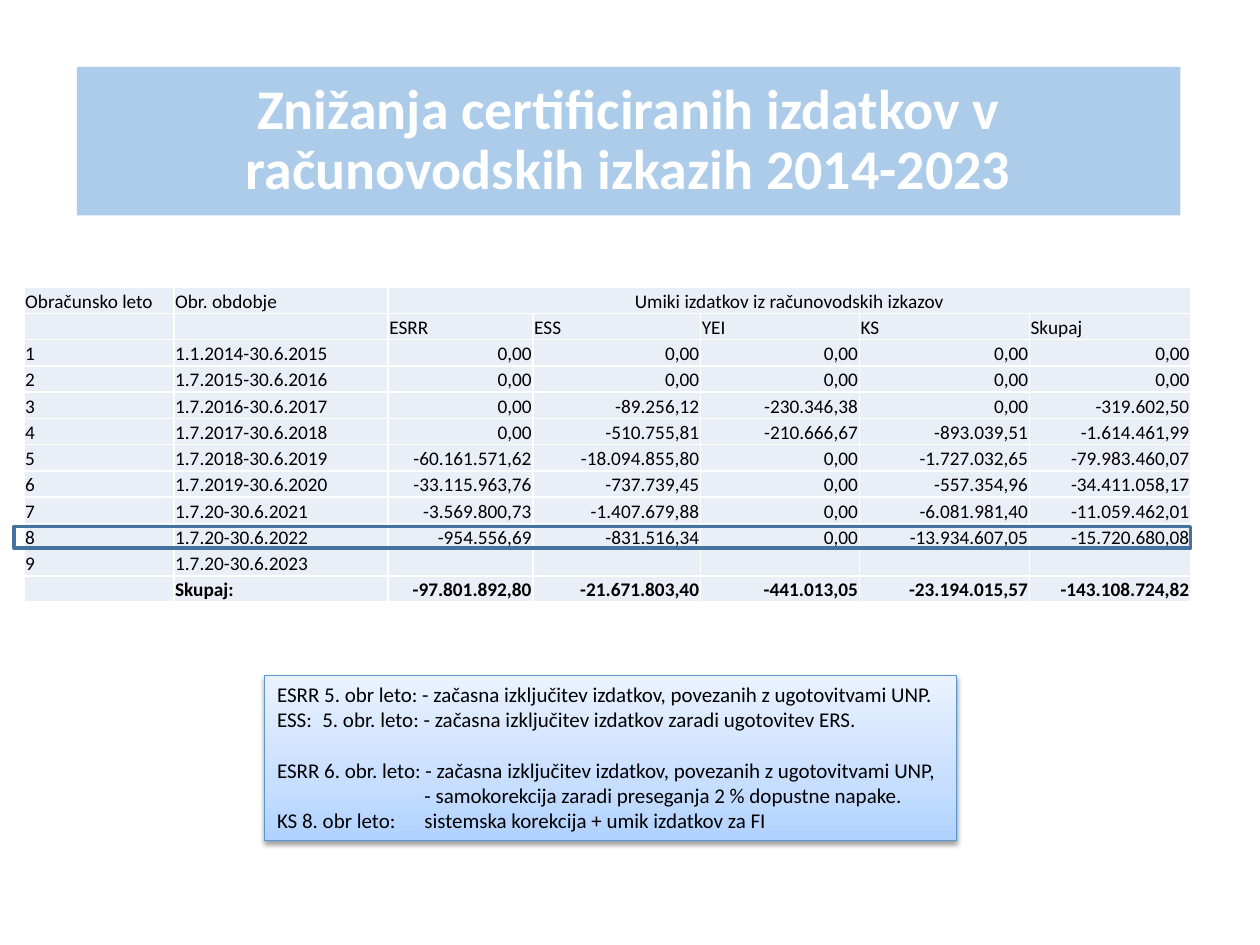
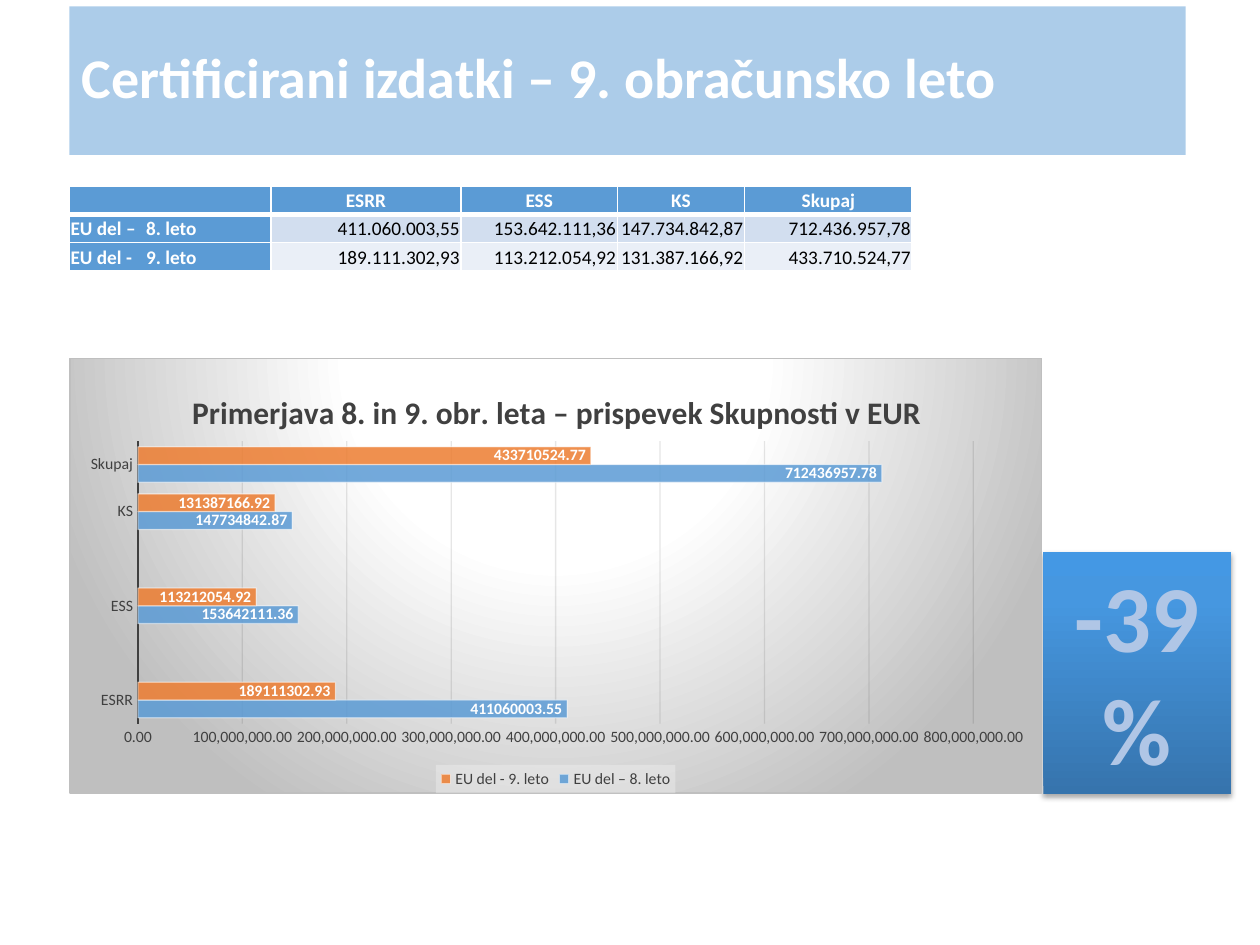
import pptx
import pptx.util
import pptx.chart.data
import pptx.dml.color
import pptx.enum.chart
import pptx.enum.shapes
import pptx.enum.text
import pptx.oxml
import pptx.oxml.ns

Inches, Pt = pptx.util.Inches, pptx.util.Pt
Align, Anchor = pptx.enum.text.PP_ALIGN, pptx.enum.text.MSO_ANCHOR
RECT = pptx.enum.shapes.MSO_SHAPE.RECTANGLE
qn, parse = pptx.oxml.ns.qn, pptx.oxml.parse_xml
NS = pptx.oxml.ns.nsdecls("a", "c")


class Theme:
    font = "Calibri"
    white, black, dark, grey = "FFFFFF", "000000", "404040", "BFBFBF"
    blue, orange, edge = "5B9BD5", "ED7D31", "43739E"
    pale, mid, big = "EAEFF7", "D2DEEF", "B0C6E6"
    note_line, grid, key = "5698D3", "0D0D0D", "F2F2F2"
    note_fade = ((0, "B0D2FF"), (35, "C7DEFF"), (100, "EAF2FF"))
    drop_fade = ((0, "3674AD"), (80, "4697E0"), (100, "4498E4"))
    area_fade = ((0, white), (39, white), (100, grey))
    title, note, cell, drop, head, label = 32, 12, 11, 54, 18, 9


UP = '<a:lin ang="16200000" scaled="0"/>'
ROUND = ('<a:path path="circle"><a:fillToRect l="50000" t="-80000" '
         'r="50000" b="180000"/></a:path>')


# Shared helpers
def rgb(code):
    return pptx.dml.color.RGBColor.from_string(code)


def style(font, size, color, bold=False):
    font.name, font.size, font.bold = Theme.font, Pt(size), bold
    font.color.rgb = rgb(color)


def write(para, text, size, color, bold=False, align=None):
    para.alignment = align
    run = para.add_run()
    run.text = text
    style(run.font, size, color, bold)


def tab_stop(para, inch):
    props = para._p.get_or_add_pPr()
    props.append(parse(f'<a:tabLst {NS}><a:tab pos="{Inches(inch)}" algn="l"/></a:tabLst>'))


def fade(part, percent):
    for color in part.iter(qn("a:srgbClr")):
        color.append(parse(f'<a:alpha {NS} val="{percent * 1000}"/>'))


def blend(stops, way):
    marks = "".join(f'<a:gs pos="{at * 1000}"><a:srgbClr val="{code}"/></a:gs>'
                    for at, code in stops)
    return f'<a:gradFill {NS} rotWithShape="1"><a:gsLst>{marks}</a:gsLst>{way}</a:gradFill>'


def add_rect(slide, box, fill=None, line=None, width=1):
    shape = slide.shapes.add_shape(RECT, *map(Inches, box))
    shape.shadow.inherit = False
    if fill:
        shape.fill.solid()
        shape.fill.fore_color.rgb = rgb(fill)
    else:
        shape.fill.background()
    if line:
        shape.line.color.rgb = rgb(line)
        shape.line.width = Pt(width)
    else:
        shape.line.fill.background()
    shape.text_frame.word_wrap = True
    return shape


def add_panel(slide, box, stops, dist, percent, line=None):
    """Rectangle with an upward gradient and a soft shadow."""
    shape = add_rect(slide, box, None, line, 0.75)
    props = shape._element.spPr
    props.replace(props.find(qn("a:noFill")), parse(blend(stops, UP)))
    props.find(qn("a:effectLst")).append(parse(
        f'<a:outerShdw {NS} blurRad="{Pt(3.1)}" dist="{Pt(dist)}" dir="5400000" '
        f'rotWithShape="0"><a:srgbClr val="{Theme.black}">'
        f'<a:alpha val="{percent * 1000}"/></a:srgbClr></a:outerShdw>'))
    shape.text_frame.vertical_anchor = Anchor.TOP
    return shape


def add_title(slide, box, text, align):
    band = add_rect(slide, box, Theme.blue)
    fade(band._element.spPr, 50)
    band.text_frame.vertical_anchor = Anchor.MIDDLE
    para = band.text_frame.paragraphs[0]
    para.line_spacing = 0.9
    write(para, text, Theme.title, Theme.white, True, align)


def add_grid(slide, left, top, cols, high, rows, look, anchor):
    """Table whose look(row, col) gives fill, text colour, bold and alignment."""
    table = slide.shapes.add_table(
        len(rows), len(cols), Inches(left), Inches(top),
        Inches(sum(cols)), Inches(high)).table
    table.first_row = table.horz_banding = False
    for col, wide in enumerate(cols):
        table.columns[col].width = Inches(wide)
    for r, row in enumerate(rows):
        table.rows[r].height = Inches(high / len(rows))
        for c, text in enumerate(row):
            cell = table.cell(r, c)
            fill, color, bold, align = look(r, c)
            cell.margin_left = cell.margin_right = cell.margin_top = Inches(0.01)
            cell.margin_bottom = 0
            cell.vertical_anchor = anchor
            for side in "LRTB":
                cell._tc.get_or_add_tcPr().append(parse(
                    f'<a:ln{side} {NS} w="{Pt(1)}"><a:solidFill><a:srgbClr '
                    f'val="{Theme.white}"/></a:solidFill></a:ln{side}>'))
            cell.fill.solid()
            cell.fill.fore_color.rgb = rgb(fill)
            para = cell.text_frame.paragraphs[0]
            if "\t" in text:
                tab_stop(para, 0.6)
            if text:
                write(para, text, Theme.cell, color, bold, align)
            else:
                para._p.append(parse(f'<a:endParaRPr {NS} sz="{Theme.cell * 100}"/>'))
    return table


# Slide 1: cuts by accounting year
YEARS = ["1.1.2014-30.6.2015", "1.7.2015-30.6.2016", "1.7.2016-30.6.2017",
         "1.7.2017-30.6.2018", "1.7.2018-30.6.2019", "1.7.2019-30.6.2020",
         "1.7.20-30.6.2021", "1.7.20-30.6.2022", "1.7.20-30.6.2023"]
CUTS = [
    ["Umiki izdatkov iz računovodskih izkazov", "", "", "", ""],
    ["ESRR", "ESS", "YEI", "KS", "Skupaj"],
    ["0,00"] * 5,
    ["0,00"] * 5,
    ["0,00", "-89.256,12", "-230.346,38", "0,00", "-319.602,50"],
    ["0,00", "-510.755,81", "-210.666,67", "-893.039,51", "-1.614.461,99"],
    ["-60.161.571,62", "-18.094.855,80", "0,00", "-1.727.032,65", "-79.983.460,07"],
    ["-33.115.963,76", "-737.739,45", "0,00", "-557.354,96", "-34.411.058,17"],
    ["-3.569.800,73", "-1.407.679,88", "0,00", "-6.081.981,40", "-11.059.462,01"],
    ["-954.556,69", "-831.516,34", "0,00", "-13.934.607,05", "-15.720.680,08"],
    [""] * 5,
    ["-97.801.892,80", "-21.671.803,40", "-441.013,05", "-23.194.015,57",
     "-143.108.724,82"],
]
# Each note: text, tab stop, space before
NOTES = [
    ("ESRR 5. obr leto: - začasna izključitev izdatkov, povezanih z ugotovitvami UNP.", None, 0),
    ("ESS:\t5. obr. leto: - začasna izključitev izdatkov zaradi ugotovitev ERS.", 0.36, 0),
    ("ESRR 6. obr. leto: - začasna izključitev izdatkov, povezanih z ugotovitvami UNP,", None, 14.6),
    ("\t- samokorekcija zaradi preseganja 2 % dopustne napake.", 1.17, 0),
    ("KS 8. obr leto:\tsistemska korekcija + umik izdatkov za FI", 1.17, 0),
]


def add_cuts(slide, left, top, high):
    last = len(CUTS) - 1

    def year_look(r, c):
        return Theme.pale, Theme.black, r == last, Align.LEFT

    def cut_look(r, c):
        align = {0: Align.CENTER, 1: Align.LEFT}.get(r, Align.RIGHT)
        return Theme.pale, Theme.black, r == last, align

    spans = [["Obračunsko leto", "Obr. obdobje"], ["", ""]]
    spans += [[str(n), span] for n, span in enumerate(YEARS, 1)]
    spans += [["", "Skupaj:"]]
    wide = [1.19, 1.7]
    sums = add_grid(slide, left + sum(wide), top, [1.15, 1.33, 1.26, 1.35, 1.28],
                    high, CUTS, cut_look, Anchor.BOTTOM)
    sums.cell(0, 0).merge(sums.cell(0, 4))
    add_grid(slide, left, top, wide, high, spans, year_look, Anchor.BOTTOM)
    # Frame round year 8
    add_rect(slide, (left - 0.08, top + 1.9, 9.34, 0.17), None, Theme.edge, 2)


def add_notes(slide, box):
    frame = add_panel(slide, box, Theme.note_fade, 1.6, 38, Theme.note_line).text_frame
    frame.margin_right = 0
    for n, (text, stop, gap) in enumerate(NOTES):
        para = frame.add_paragraph() if n else frame.paragraphs[0]
        if gap:
            para.space_before = Pt(gap)
        if stop:
            tab_stop(para, stop)
        write(para, text, Theme.note, Theme.black, align=Align.LEFT)


def cuts_slide(slide):
    add_title(slide, (0.61, 0.53, 8.76, 1.18),
              "Znižanja certificiranih izdatkov v računovodskih izkazih 2014-2023", Align.CENTER)
    add_notes(slide, (2.1, 5.36, 5.49, 1.31))
    add_cuts(slide, 0.19, 2.28, 2.5)


# Slide 2: year 9 against year 8
FUNDS = ["ESRR", "ESS", "KS", "Skupaj"]
SPENT = [("EU del –", "8. leto", [411060003.55, 153642111.36, 147734842.87, 712436957.78]),
         ("EU del -", "9. leto", [189111302.93, 113212054.92, 131387166.92, 433710524.77])]


def euro(value):
    return f"{value:,.2f}".translate(str.maketrans(",.", ".,"))


def add_sums(slide, left, top):
    def look(r, c):
        if r == 0 or c == 0:
            return Theme.blue, Theme.white, True, Align.LEFT if c == 0 else Align.CENTER
        return (Theme.mid if r == 1 else Theme.pale), Theme.black, False, Align.RIGHT

    rows = [[""] + FUNDS]
    rows += [[f"{part}\t{year}"] + [euro(v) for v in vals] for part, year, vals in SPENT]
    table = add_grid(slide, left, top, [1.6, 1.51, 1.24, 1.01, 1.33], 0.67,
                     rows, look, Anchor.MIDDLE)
    # Thick rule under the head row
    for c in range(len(table.columns)):
        for r, side in ((0, "a:lnB"), (1, "a:lnT")):
            table.cell(r, c)._tc.tcPr.find(qn(side)).set("w", str(Pt(3)))


def lay_out(part, mark, inner=False, **sizes):
    """Place a chart part by shares of the chart's size, after the child named mark."""
    for old in part.findall(qn("c:layout")):
        part.remove(old)
    keys = ['<c:layoutTarget val="inner"/>'] if inner else []
    keys += [f'<c:{k}Mode val="edge"/>' for k in "xy"]
    keys += [f'<c:{k} val="{v}"/>' for k, v in sizes.items()]
    layout = parse(f'<c:layout {NS}><c:manualLayout>{"".join(keys)}</c:manualLayout></c:layout>')
    if mark:
        part.find(qn(mark)).addnext(layout)
    else:
        part.insert(0, layout)


def add_bars(slide, box):
    enum = pptx.enum.chart
    data = pptx.chart.data.CategoryChartData()
    data.categories = ["ESRR", "", "ESS", "", "KS", "Skupaj"]
    for part, year, (esrr, ess, ks, total) in SPENT:
        data.add_series(f"{part} {year}", [esrr, None, ess, None, ks, total])
    chart = slide.shapes.add_chart(
        enum.XL_CHART_TYPE.BAR_CLUSTERED, *map(Inches, box), data).chart
    style(chart.font, 10, Theme.black)
    space = chart._chartSpace
    space.find(qn("c:chart")).addnext(parse(
        f'<c:spPr {NS}>{blend(Theme.area_fade, ROUND)}<a:ln w="{Pt(0.75)}"><a:solidFill>'
        f'<a:srgbClr val="{Theme.grey}"/></a:solidFill></a:ln></c:spPr>'))

    # Title and plot area
    chart.has_title = True
    write(chart.chart_title.text_frame.paragraphs[0],
          "Primerjava 8. in 9. obr. leta – prispevek Skupnosti v EUR",
          Theme.head, Theme.dark, True)
    chart.chart_title.include_in_layout = False
    lay_out(chart.chart_title._element, "c:tx", x=0.12, y=0.06)
    lay_out(space.chart.plotArea, None, True, x=0.07, y=0.19, w=0.86, h=0.65)

    # Bars and labels
    plot = chart.plots[0]
    plot.gap_width, plot.overlap, plot.vary_by_categories = 65, 0, False
    for bars, color in zip(plot.series, (Theme.blue, Theme.orange)):
        bars.format.fill.solid()
        bars.format.fill.fore_color.rgb = rgb(color)
        fade(bars._element.find(qn("c:spPr")), 85)
        bars.format.line.color.rgb = rgb(Theme.white)
        bars.format.line.width = Pt(0.75)
        fade(bars._element.find(qn("c:spPr")).find(qn("a:ln")), 50)
        labels = bars.data_labels
        labels.show_value = True
        labels.number_format, labels.number_format_is_linked = "General", False
        labels.position = enum.XL_LABEL_POSITION.INSIDE_END
        style(labels.font, Theme.label, Theme.white, True)

    # Axes
    funds, euros = chart.category_axis, chart.value_axis
    for axis in (funds, euros):
        axis.major_tick_mark = axis.minor_tick_mark = enum.XL_TICK_MARK.NONE
        style(axis.tick_labels.font, Theme.label, Theme.dark)
    funds.format.line.color.rgb = rgb(Theme.dark)
    funds.format.line.width = Pt(1.5)
    euros.format.line.fill.background()
    euros.minimum_scale, euros.maximum_scale, euros.major_unit = 0, 800e6, 100e6
    euros.tick_labels.number_format = "#,##0.00"
    euros.tick_labels.number_format_is_linked = False
    grid = euros.major_gridlines.format.line
    grid.color.rgb, grid.width = rgb(Theme.grid), Pt(0.75)
    fade(euros._element.find(qn("c:majorGridlines")), 10)

    # Legend
    chart.has_legend = True
    legend = chart.legend
    legend.position = enum.XL_LEGEND_POSITION.BOTTOM
    legend.include_in_layout = False
    style(legend.font, Theme.label, Theme.dark)
    legend._element.find(qn("c:txPr")).addprevious(parse(
        f'<c:spPr {NS}><a:solidFill><a:srgbClr val="{Theme.key}"><a:alpha val="40000"/>'
        f'</a:srgbClr></a:solidFill></c:spPr>'))


def add_drop(slide, box):
    panel = add_panel(slide, box, Theme.drop_fade, 1.8, 35)
    write(panel.text_frame.paragraphs[0], "-39 %", Theme.drop, Theme.big, True, Align.CENTER)


def year_slide(slide):
    add_title(slide, (0.55, 0.05, 8.86, 1.18),
              "Certificirani izdatki – 9. obračunsko leto", Align.LEFT)
    add_drop(slide, (8.28, 4.38, 1.49, 1.92))
    add_sums(slide, 0.55, 1.48)
    add_bars(slide, (0.55, 2.84, 7.72, 3.46))


def main():
    deck = pptx.Presentation()
    deck.slide_width, deck.slide_height = Inches(10), Inches(7.5)
    for build in (cuts_slide, year_slide):
        build(deck.slides.add_slide(deck.slide_layouts[6]))
    deck.save("out.pptx")


if __name__ == "__main__":
    main()
